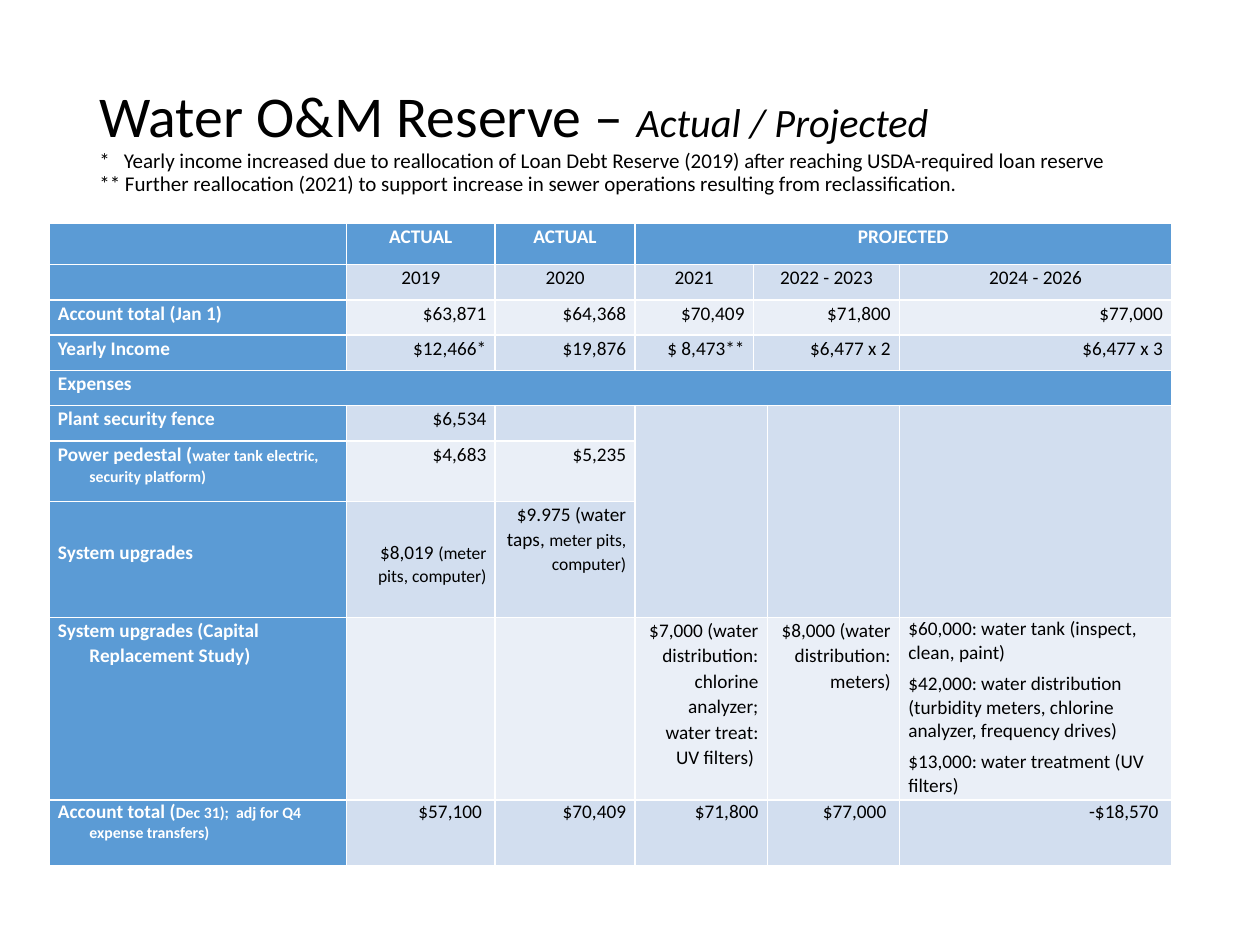
from dataclasses import dataclass

from lxml.etree import SubElement
from pptx import Presentation
from pptx.dml.color import RGBColor
from pptx.enum.text import MSO_ANCHOR, PP_ALIGN
from pptx.oxml.ns import qn
from pptx.util import Inches, Pt


@dataclass(frozen=True)
class Theme:
    font: str = "Calibri"
    ink: RGBColor = RGBColor(0, 0, 0)
    white: RGBColor = RGBColor(255, 255, 255)
    blue: RGBColor = RGBColor(0x5B, 0x9B, 0xD5)
    dark: RGBColor = RGBColor(0xD2, 0xDE, 0xEF)
    light: RGBColor = RGBColor(0xEA, 0xEF, 0xF7)
    title: int = 33
    sub: int = 23
    note: int = 12
    body: int = 11
    mid: int = 10
    small: int = 9


@dataclass(frozen=True)
class Line:
    """A paragraph whose tail may be set in a smaller size."""
    text: str
    tail: str = ""
    size: int = 9


@dataclass(frozen=True)
class Row:
    height: float
    label: str | Line
    cells: tuple = ()
    starts: tuple[int, ...] = (1, 2, 3, 5, 6)
    lead: float = 1.07
    align: PP_ALIGN = PP_ALIGN.RIGHT
    hang: float = 0
    drop: tuple[float, ...] = (0,) * 7
    band: RGBColor = Theme.dark


THEME = Theme()
EARLY = (1, 2, 3, 4, 6)
WIDTHS = (2.36, 1.18, 1.11, 0.94, 0.11, 1.05, 2.16)
TANK = (
    Line("$60,000: water tank (inspect, clean, paint)"),
    Line("$42,000: water distribution (turbidity meters, chlorine analyzer, "
         "frequency drives)"),
    Line("$13,000: water treatment (UV filters)"),
)
ROWS = (
    Row(0.33, "", ("ACTUAL", "ACTUAL", "PROJECTED"), EARLY,
        align=PP_ALIGN.CENTER, band=THEME.blue),
    Row(0.28, "", ("2019", "2020", "2021", "2022 - 2023", "2024 - 2026"),
        EARLY, align=PP_ALIGN.CENTER),
    Row(0.28, "Account total (Jan 1)",
        ("$63,871", "$64,368", "$70,409", "$71,800", "$77,000"), EARLY,
        band=THEME.light),
    Row(0.28, "Yearly Income",
        ("$12,466*", "$19,876", "$ 8,473**", "$6,477 x 2", "$6,477 x 3"), EARLY),
    Row(0.28, "Expenses", band=THEME.blue),
    Row(0.28, "Plant security fence", ("$6,534",)),
    Row(0.48, Line("Power pedestal (", "water tank electric, security platform)"),
        ("$4,683", "$5,235"), hang=0.25, band=THEME.light),
    Row(0.92, "System upgrades",
        (Line("$8,019 ", "(meter pits, computer)", THEME.mid),
         Line("$9.975 (water taps, ", "meter pits, computer)", THEME.mid)),
        hang=0.25, drop=(0.3, 0.3, 0, 0, 0, 0, 0)),
    Row(1.45, "System upgrades (Capital Replacement Study)",
        ("", "", "$7,000 (water distribution: chlorine analyzer; "
         "water treat: UV filters) ",
         "$8,000 (water distribution: meters)", TANK),
        hang=0.25, band=THEME.light),
    Row(0.52, Line("Account total (", "Dec 31);  adj for Q4 expense transfers)"),
        ("$57,100 ", "$70,409", "$71,800", "$77,000 ", "-$18,570 "),
        lead=1, hang=0.25),
)
# top row, left column, bottom row, right column
MERGES = (
    (0, 3, 0, 6),
    *((row, 4, row, 5) for row in (1, 2, 3)),
    (4, 0, 4, 6),
    (5, 3, 7, 4), (5, 5, 7, 5), (5, 6, 7, 6),
    (8, 3, 8, 4), (9, 3, 9, 4),
)


def set_font(font, size: int, color: RGBColor, bold: bool = False) -> None:
    font.name = THEME.font
    font.size = Pt(size)
    font.color.rgb = color
    font.bold = bold


def add_title(slide) -> None:
    box = slide.shapes.add_textbox(
        Inches(0.69), Inches(0.4), Inches(8.62), Inches(1.45))
    frame = box.text_frame
    frame.word_wrap = True
    frame.vertical_anchor = MSO_ANCHOR.MIDDLE
    para = frame.paragraphs[0]
    para.line_spacing = 0.9
    parts = (
        ("Water O&M Reserve – ", THEME.title, False, False),
        ("Actual / Projected", THEME.sub, True, True),
        ("*   Yearly income increased due to reallocation of Loan Debt Reserve "
         "(2019) after reaching USDA-required loan reserve",
         THEME.note, False, True),
        ("** Further reallocation (2021) to support increase in sewer "
         "operations resulting from reclassification.", THEME.note, False, False),
    )
    for text, size, slant, cut in parts:
        run = para.add_run()
        run.text = text
        set_font(run.font, size, THEME.ink)
        run.font.italic = slant
        if cut:
            para.add_line_break()


def write(cell, lines: tuple[Line, ...], row: Row, label: bool) -> None:
    frame = cell.text_frame
    color = THEME.white if label or row.band == THEME.blue else THEME.ink
    for index, line in enumerate(lines):
        para = frame.add_paragraph() if index else frame.paragraphs[0]
        plain = len(lines) > 1
        para.alignment = PP_ALIGN.LEFT if label or plain else row.align
        para.line_spacing = 1 if plain else row.lead
        para.space_before = Pt(4)
        set_font(para.font, THEME.body, color, color == THEME.white)
        if label and row.hang:
            props = para._p.get_or_add_pPr()
            props.set("marL", str(Inches(row.hang)))
            props.set("indent", str(Inches(-row.hang)))
        for text, size in ((line.text, THEME.body), (line.tail, line.size)):
            if text:
                run = para.add_run()
                run.text = text
                run.font.size = Pt(size)


def dress(cell, color: RGBColor, drop: float) -> None:
    """Fill a cell and keep its empty paragraph at body size."""
    cell.fill.solid()
    cell.fill.fore_color.rgb = color
    cell.margin_left = cell.margin_right = Inches(0.07)
    cell.margin_top, cell.margin_bottom = Inches(drop), 0
    para = cell.text_frame.paragraphs[0]
    SubElement(para._p, qn("a:endParaRPr")).set("sz", str(THEME.body * 100))


def add_grid(slide) -> None:
    table = slide.shapes.add_table(
        len(ROWS), len(WIDTHS), Inches(0.39), Inches(1.77),
        Inches(sum(WIDTHS)), Inches(sum(row.height for row in ROWS))).table
    table.first_col = True
    for col, width in zip(table.columns, WIDTHS):
        col.width = Inches(width)
    for top, left, low, right in MERGES:
        table.cell(top, left).merge(table.cell(low, right))
    for at, row in enumerate(ROWS):
        table.rows[at].height = Inches(row.height)
        for col in range(len(WIDTHS)):
            dress(table.cell(at, col), row.band if col else THEME.blue,
                  row.drop[col])
        for col, text in zip((0, *row.starts), (row.label, *row.cells)):
            if text:
                lines = text if isinstance(text, tuple) else (
                    text if isinstance(text, Line) else Line(text),)
                write(table.cell(at, col), lines, row, col == 0)


def main() -> None:
    deck = Presentation()
    deck.slide_width, deck.slide_height = Inches(10), Inches(7.5)
    slide = deck.slides.add_slide(deck.slide_layouts[6])
    add_title(slide)
    add_grid(slide)
    deck.save("out.pptx")


if __name__ == "__main__":
    main()
